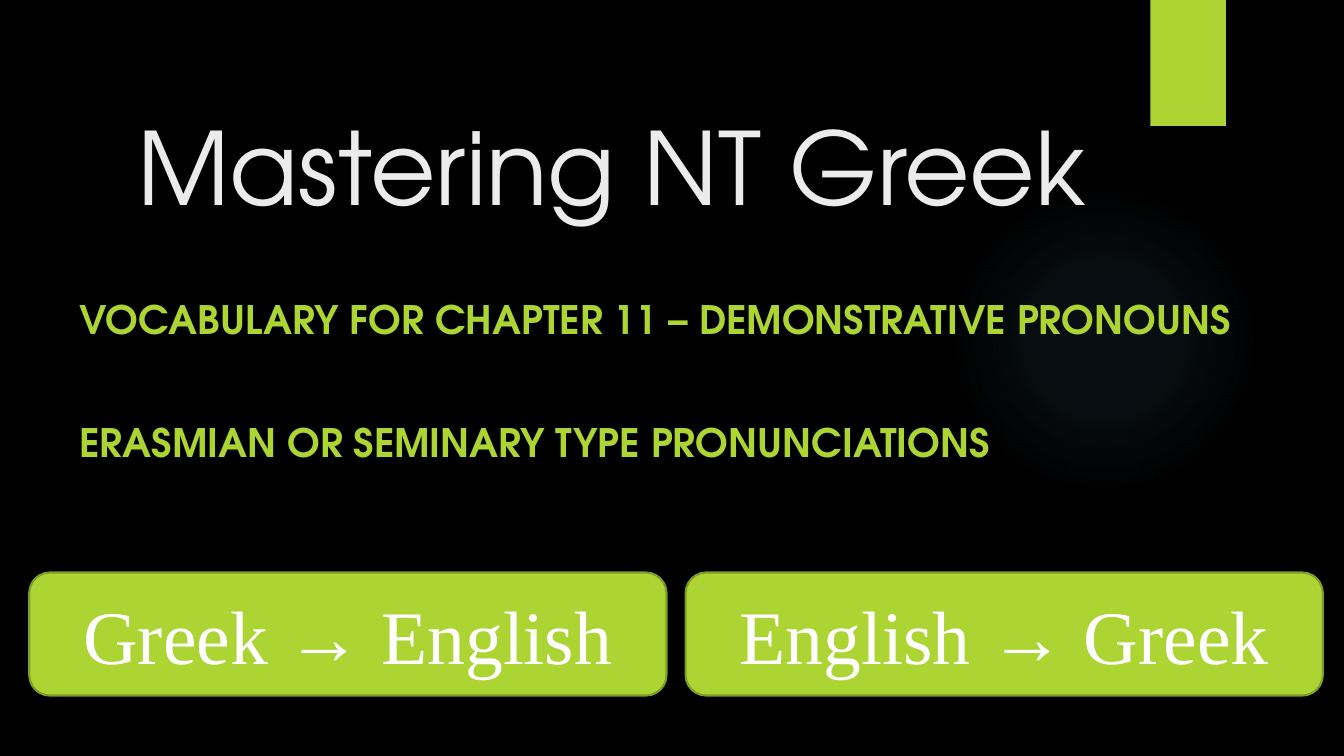
"""Build the title slide of a Greek vocabulary lesson."""
from dataclasses import dataclass

import pptx
import pptx.dml.color
import pptx.enum.shapes
import pptx.enum.text
import pptx.oxml
import pptx.oxml.ns
import pptx.util
from pptx.util import Inches

RGBColor = pptx.dml.color.RGBColor
Kind = pptx.enum.shapes.MSO_SHAPE
Align = pptx.enum.text.PP_ALIGN
Anchor = pptx.enum.text.MSO_ANCHOR

BLACK = RGBColor(0x00, 0x00, 0x00)
LIME = RGBColor(0xAC, 0xD4, 0x33)
OLIVE = RGBColor(0x7F, 0x9D, 0x26)
PALE = RGBColor(0xEB, 0xEB, 0xEB)
WHITE = RGBColor(0xFF, 0xFF, 0xFF)
SKY = RGBColor(0x7A, 0xC4, 0xF0)
SANS = "TeX Gyre Adventor"
SERIF = "Times New Roman"


@dataclass
class Box:
    left: float
    top: float
    width: float
    height: float

    def place(self) -> tuple:
        return tuple(map(Inches, (self.left, self.top, self.width, self.height)))


@dataclass
class Style:
    face: str
    size: int
    color: RGBColor
    bold: bool = False
    align: Align = Align.LEFT
    gap: int = 0


def write(frame, lines: list[str], style: Style, anchor: Anchor) -> None:
    frame.text = "\n".join(lines)
    frame.word_wrap = True
    frame.auto_size = pptx.enum.text.MSO_AUTO_SIZE.NONE
    frame.vertical_anchor = anchor
    for rank, para in enumerate(frame.paragraphs):
        para.alignment = style.align
        para.space_before = pptx.util.Pt(style.gap if rank else 0)
        font = para.font
        font.name, font.size = style.face, pptx.util.Pt(style.size)
        font.bold, font.color.rgb = style.bold, style.color


def fill_holder(holder, box: Box, lines: list[str], style: Style, anchor: Anchor) -> None:
    holder.left, holder.top, holder.width, holder.height = box.place()
    write(holder.text_frame, lines, style, anchor)


def add_block(slide, kind: Kind, box: Box):
    block = slide.shapes.add_shape(kind, *box.place())
    block.shadow.inherit = False
    block.fill.solid()
    block.fill.fore_color.rgb = LIME
    block.line.fill.background()
    return block


def add_glow(slide, box: Box) -> None:
    glow = add_block(slide, Kind.OVAL, box)
    stops = "".join(
        f'<a:gs pos="{spot * 1000}"><a:srgbClr val="{SKY}">'
        f'<a:alpha val="{alpha * 1000}"/></a:srgbClr></a:gs>'
        for spot, alpha in ((0, 7), (36, 6), (69, 0), (100, 0))
    )
    blend = pptx.oxml.parse_xml(
        f'<a:gradFill {pptx.oxml.ns.nsdecls("a")}><a:gsLst>{stops}</a:gsLst>'
        '<a:path path="circle"><a:fillToRect l="50000" t="50000" r="50000" b="50000"/>'
        "</a:path></a:gradFill>"
    )
    props = glow.element.spPr
    props.replace(props.find(pptx.oxml.ns.qn("a:solidFill")), blend)
    slide.shapes.element.insert(2, glow.element)


def add_button(slide, box: Box, label: str) -> None:
    button = add_block(slide, Kind.ROUNDED_RECTANGLE, box)
    button.line.color.rgb = OLIVE
    button.line.width = pptx.util.Pt(1.5)
    style = Style(SERIF, 54, WHITE, align=Align.CENTER)
    write(button.text_frame, [label], style, Anchor.MIDDLE)


def main() -> None:
    deck = pptx.Presentation()
    deck.slide_width, deck.slide_height = Inches(13.33), Inches(7.5)
    slide = deck.slides.add_slide(deck.slide_layouts[0])
    slide.background.fill.solid()
    slide.background.fill.fore_color.rgb = BLACK

    add_glow(slide, Box(9.41, 1.83, 3.08, 3.08))
    add_block(slide, Kind.RECTANGLE, Box(11.41, 0, 0.75, 1.25))
    fill_holder(slide.shapes.title, Box(1.26, 0.7, 10.04, 1.59),
                ["Mastering NT Greek"], Style(SANS, 72, PALE), Anchor.BOTTOM)
    topics = ["VOCABULARY FOR CHAPTER 11 – DEMONSTRATIVE PRONOUNS",
              "ERASMIAN OR SEMINARY TYPE PRONUNCIATIONS"]
    fill_holder(slide.placeholders[1], Box(0.69, 2.88, 11.85, 2.69),
                topics, Style(SANS, 28, LIME, bold=True, gap=54), Anchor.TOP)
    for rank, label in enumerate(("Greek → English", "English → Greek")):
        add_button(slide, Box(0.29 + 6.51 * rank, 5.68, 6.32, 1.22), label)
    deck.save("out.pptx")


if __name__ == "__main__":
    main()
